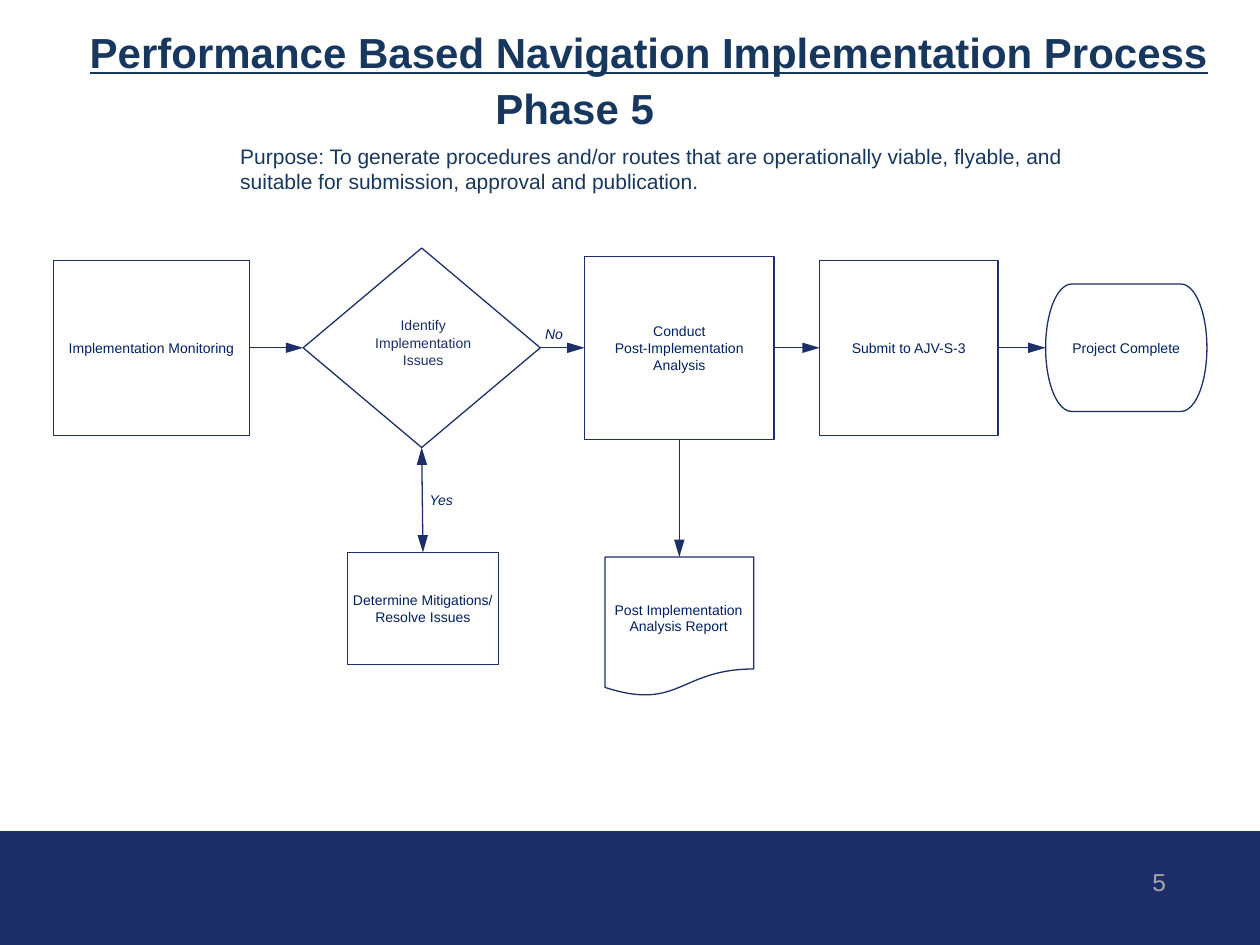
from dataclasses import dataclass
from typing import Any

from lxml import etree
from pptx import Presentation
from pptx.dml.color import RGBColor
from pptx.enum import shapes, text
from pptx.oxml.ns import qn
from pptx.util import Pt


@dataclass(frozen=True)
class Theme:
    font: str = "Arial"
    navy: str = "1D2E68"
    outline: str = "1D2F68"
    heading: str = "17375E"
    label: str = "002060"
    muted: str = "A6A6A6"
    title_size: float = 24
    purpose_size: float = 12
    number_size: float = 14
    label_size: float = 8
    line_width: float = 0.75


@dataclass(frozen=True)
class Step:
    kind: Any
    center_x: float
    center_y: float
    width: float
    height: float
    lines: tuple[str, ...] = ()


@dataclass(frozen=True)
class Flow:
    start: str
    start_side: int
    end: str
    end_side: int
    both_ways: bool = False


@dataclass(frozen=True)
class Caption:
    lines: tuple[str, ...]
    left: float
    top: float
    width: float
    height: float
    size: float
    color: str
    style: dict[str, bool]
    wrap: bool = True
    centered: bool = False
    middle: bool = False
    spacing: float | None = None


THEME = Theme()
SLIDE_WIDTH, SLIDE_HEIGHT = 720, 540
BAND_TOP, BAND_HEIGHT = 475, 64.6
MAIN_ROW = 198.75
TOP, LEFT, BOTTOM, RIGHT = range(4)
KIND = shapes.MSO_SHAPE

STEPS = {
    "monitor": Step(KIND.RECTANGLE, 86.6, MAIN_ROW, 112.4, 100, ("Implementation Monitoring",)),
    "identify": Step(KIND.FLOWCHART_DECISION, 241, MAIN_ROW, 135.5, 114),
    "analyse": Step(KIND.RECTANGLE, 388.2, MAIN_ROW, 108.3, 104.5,
                    ("Conduct", "Post-Implementation", "Analysis")),
    "submit": Step(KIND.RECTANGLE, 519.4, MAIN_ROW, 102, 100, ("Submit to AJV-S-3",)),
    "complete": Step(KIND.FLOWCHART_TERMINATOR, 643.6, MAIN_ROW, 92.2, 72.8,
                     ("Project Complete",)),
    "mitigate": Step(KIND.RECTANGLE, 241.7, 347.7, 86, 64,
                     ("Determine Mitigations/ Resolve Issues",)),
    "report": Step(KIND.FLOWCHART_DOCUMENT, 388.2, 358.2, 85, 79.8),
}

FLOWS = [
    Flow("monitor", RIGHT, "identify", LEFT),
    Flow("identify", RIGHT, "analyse", LEFT),
    Flow("analyse", RIGHT, "submit", LEFT),
    Flow("submit", RIGHT, "complete", LEFT),
    Flow("identify", BOTTOM, "mitigate", TOP, both_ways=True),
    Flow("analyse", BOTTOM, "report", TOP),
]

BOLD, ITALIC = {"bold": True}, {"italic": True}
CAPTIONS = [
    Caption(("Performance Based Navigation Implementation Process",), 51.3, 15.3, 645, 30,
            THEME.title_size, THEME.heading, BOLD | {"underline": True}, wrap=False),
    Caption(("Phase 5",), 283, 47, 345, 30, THEME.title_size, THEME.heading, BOLD),
    Caption(("Purpose: To generate procedures and/or routes that are operationally viable, "
             "flyable, and suitable for submission, approval and publication.",),
            137.3, 81.8, 474, 28, THEME.purpose_size, THEME.heading, {}),
    Caption(("5",), 658.5, 495.5, 12, 18, THEME.number_size, THEME.muted, {}, spacing=16.5),
    Caption(("Yes",), 245.5, 280.8, 14, 9.4, THEME.label_size, THEME.label, ITALIC, wrap=False),
    Caption(("No",), 311.5, 185.8, 13, 9.4, THEME.label_size, THEME.label, ITALIC, wrap=False),
    Caption(("Post Implementation Analysis Report",), 345, 321.1, 85.7, 64,
            THEME.label_size, THEME.label, {}, centered=True, middle=True),
    Caption(("Identify Implementation", "Issues"), 207.4, 180.7, 69, 30,
            THEME.label_size, THEME.outline, {}, centered=True, spacing=10),
]


def rgb(value: str) -> RGBColor:
    return RGBColor.from_string(value)


def write(frame, lines: tuple[str, ...], size: float, color: str, style: dict[str, bool],
          wrap: bool = True, centered: bool = False, middle: bool = False,
          spacing: float | None = None) -> None:
    anchor = text.MSO_ANCHOR.MIDDLE if middle else text.MSO_ANCHOR.TOP
    frame_format = {"word_wrap": wrap, "vertical_anchor": anchor, "margin_left": 0,
                    "margin_right": 0, "margin_top": 0, "margin_bottom": 0}
    for name, value in frame_format.items():
        setattr(frame, name, value)
    font_format = {"name": THEME.font, "size": Pt(size), **style}
    for index, line in enumerate(lines):
        paragraph = frame.add_paragraph() if index else frame.paragraphs[0]
        paragraph.alignment = text.PP_ALIGN.CENTER if centered else text.PP_ALIGN.LEFT
        if spacing:
            paragraph.line_spacing = Pt(spacing)
        run = paragraph.add_run()
        run.text = line
        for name, value in font_format.items():
            setattr(run.font, name, value)
        run.font.color.rgb = rgb(color)


def outline(item) -> None:
    item.line.color.rgb = rgb(THEME.outline)
    item.line.width = Pt(THEME.line_width)


def draw_band(slide) -> None:
    band = slide.shapes.add_shape(KIND.RECTANGLE, 0, Pt(BAND_TOP),
                                  Pt(SLIDE_WIDTH), Pt(BAND_HEIGHT))
    band.shadow.inherit = False
    band.fill.solid()
    band.fill.fore_color.rgb = rgb(THEME.navy)
    band.line.color.rgb = rgb(THEME.navy)
    band.line.width = Pt(THEME.line_width)


def draw_step(slide, step: Step):
    shape = slide.shapes.add_shape(
        step.kind, Pt(step.center_x - step.width / 2), Pt(step.center_y - step.height / 2),
        Pt(step.width), Pt(step.height))
    shape.shadow.inherit = False
    shape.fill.background()
    outline(shape)
    if step.lines:
        write(shape.text_frame, step.lines, THEME.label_size, THEME.label, {},
              centered=True, middle=True)
    return shape


def draw_flow(slide, flow: Flow, steps: dict[str, Any]) -> None:
    arrow = slide.shapes.add_connector(shapes.MSO_CONNECTOR.STRAIGHT, 0, 0, 0, 0)
    arrow.begin_connect(steps[flow.start], flow.start_side)
    arrow.end_connect(steps[flow.end], flow.end_side)
    outline(arrow)
    properties = arrow.line._get_or_add_ln()
    for end in ("a:headEnd", "a:tailEnd") if flow.both_ways else ("a:tailEnd",):
        etree.SubElement(properties, qn(end), type="triangle", w="med", len="lg")
    etree.SubElement(arrow._element.spPr, qn("a:effectLst"))


def draw_caption(slide, caption: Caption) -> None:
    box = slide.shapes.add_textbox(Pt(caption.left), Pt(caption.top),
                                   Pt(caption.width), Pt(caption.height))
    write(box.text_frame, caption.lines, caption.size, caption.color, caption.style,
          caption.wrap, caption.centered, caption.middle, caption.spacing)


def main() -> None:
    deck = Presentation()
    deck.slide_width, deck.slide_height = Pt(SLIDE_WIDTH), Pt(SLIDE_HEIGHT)
    slide = deck.slides.add_slide(deck.slide_layouts[6])
    draw_band(slide)
    steps = {name: draw_step(slide, step) for name, step in STEPS.items()}
    for flow in FLOWS:
        draw_flow(slide, flow, steps)
    for caption in CAPTIONS:
        draw_caption(slide, caption)
    deck.save("out.pptx")


if __name__ == "__main__":
    main()
